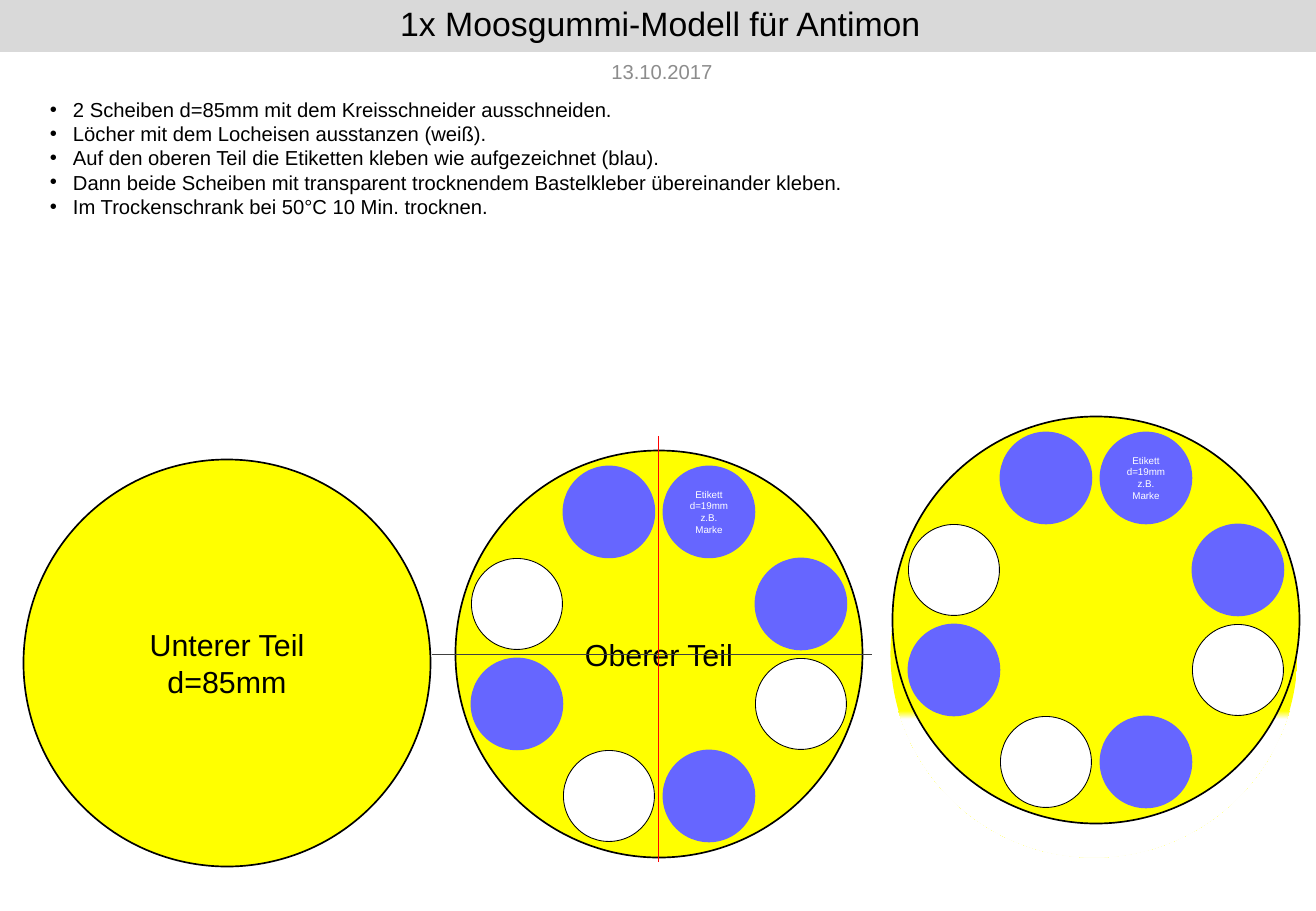
"""Builds the slide with the foam rubber model of antimony: two discs and the glued result."""
from dataclasses import dataclass

from lxml import etree
from pptx import Presentation
from pptx.dml.color import RGBColor
from pptx.enum.shapes import MSO_CONNECTOR, MSO_SHAPE
from pptx.enum.text import MSO_ANCHOR, MSO_AUTO_SIZE, PP_ALIGN
from pptx.oxml.ns import qn
from pptx.util import Pt

ELLIPSE = MSO_SHAPE.OVAL
STRAIGHT = MSO_CONNECTOR.STRAIGHT
MIDDLE, TOP = MSO_ANCHOR.MIDDLE, MSO_ANCHOR.TOP
CENTER, LEFT = PP_ALIGN.CENTER, PP_ALIGN.LEFT
NO_AUTOFIT = MSO_AUTO_SIZE.NONE
EMU_PER_PX = 7526
TITLE_ONLY = 5


@dataclass(frozen=True)
class Theme:
    font: str = "Arial"
    black: str = "000000"
    white: str = "FFFFFF"
    grey: str = "8C8C8C"
    band: str = "D9D9D9"
    foam: str = "FFFF00"
    label: str = "6666FF"
    red: str = "FF0000"
    dark: str = "404040"
    title_size: float = 20
    disc_size: float = 18
    body_size: float = 12
    label_size: float = 5.8


THEME = Theme()

SLIDE_SIZE = (1316, 911)
TITLE = ("1x Moosgummi-Modell für Antimon", (0, 0, 1321, 52))
DATE = ("13.10.2017", (583, 52, 158, 38))
STEPS = [
    "2 Scheiben d=85mm mit dem Kreisschneider ausschneiden.",
    "Löcher mit dem Locheisen ausstanzen (weiß).",
    "Auf den oberen Teil die Etiketten kleben wie aufgezeichnet (blau).",
    "Dann beide Scheiben mit transparent trocknendem Bastelkleber übereinander kleben.",
    "Im Trockenschrank bei 50°C 10 Min. trocknen.",
]
STEPS_BOX = (38, 91, 1244, 96)
STEP_INDENT = 23

DISC, SPOT = 407, 91
LABEL_INSET = 11
NEAR, FAR = 50, 142
LOWER_DISC = ("Unterer Teil\nd=85mm", (227, 663))
UPPER_DISC = ("Oberer Teil", (659, 654))
GLUED_DISC = ("", (1096, 620))
GLUED_BACK = (1094, 654)
BACK_FADE = (0.64, 0.66)
LABEL_TEXT = "Etikett d=19mm\nz.B. Marke"
SPOTS = [
    (NEAR, -FAR, "label", LABEL_TEXT),
    (-NEAR, FAR, "hole", ""),
    (NEAR, FAR, "label", ""),
    (-FAR, NEAR, "label", ""),
    (FAR, NEAR, "hole", ""),
    (-FAR, -NEAR, "hole", ""),
    (FAR, -NEAR, "label", ""),
    (-NEAR, -FAR, "label", ""),
]
SPOT_STYLES = {
    "label": (THEME.label, THEME.label, 1),
    "hole": (THEME.white, THEME.black, 0.5),
}
AXES = [
    ((658, 436), (658, 862), THEME.red),
    ((432, 654), (872, 654), THEME.dark),
]


def px(length):
    return length * EMU_PER_PX


def rgb(color):
    return RGBColor.from_string(color)


def write(frame, text, size, color, align=CENTER, anchor=MIDDLE):
    frame.text = text
    frame.word_wrap = True
    frame.auto_size = NO_AUTOFIT
    frame.vertical_anchor = anchor
    for paragraph in frame.paragraphs:
        paragraph.alignment = align
        for run in paragraph.runs:
            run.font.name = THEME.font
            run.font.size = Pt(size)
            run.font.color.rgb = rgb(color)


def add_circle(shapes, center, diameter, fill, line, width):
    left, top = (px(middle) - px(diameter) // 2 for middle in center)
    circle = shapes.add_shape(ELLIPSE, left, top, px(diameter), px(diameter))
    circle.shadow.inherit = False
    circle.fill.solid()
    circle.fill.fore_color.rgb = rgb(fill)
    circle.line.color.rgb = rgb(line)
    circle.line.width = Pt(width)
    return circle


def add_disc(shapes, text, center):
    disc = add_circle(shapes, center, DISC, THEME.foam, THEME.black, 1)
    if text:
        write(disc.text_frame, text, THEME.disc_size, THEME.black)


def add_spots(shapes, center):
    for dx, dy, kind, text in SPOTS:
        spot = add_circle(shapes, (center[0] + dx, center[1] + dy), SPOT, *SPOT_STYLES[kind])
        if text:
            frame = spot.text_frame
            write(frame, text, THEME.label_size, THEME.white)
            frame.margin_left = frame.margin_right = px(LABEL_INSET)


def add_glued_back(shapes):
    back = add_circle(shapes, GLUED_BACK, DISC, THEME.foam, THEME.foam, 1)
    back.line.fill.background()
    back.fill.gradient()
    back.fill.gradient_angle = 270
    fade = zip(back.fill.gradient_stops, BACK_FADE, (THEME.foam, THEME.white))
    for stop, position, color in fade:
        stop.position = position
        stop.color.rgb = rgb(color)


def add_axis(shapes, start, end, color):
    axis = shapes.add_connector(STRAIGHT, *map(px, start + end))
    axis.line.color.rgb = rgb(color)
    axis.line.width = Pt(0.5)
    etree.SubElement(axis._element.spPr, qn("a:effectLst"))


def add_steps(shapes):
    frame = shapes.add_textbox(*map(px, STEPS_BOX)).text_frame
    write(frame, "\n".join(STEPS), THEME.body_size, THEME.black, LEFT, TOP)
    for step in frame.paragraphs:
        properties = step._p.get_or_add_pPr()
        properties.set("marL", str(px(STEP_INDENT)))
        properties.set("indent", str(-px(STEP_INDENT)))
        etree.SubElement(properties, qn("a:buFont")).set("typeface", THEME.font)
        etree.SubElement(properties, qn("a:buChar")).set("char", "•")


def add_title(title):
    text, box = TITLE
    title.left, title.top, title.width, title.height = map(px, box)
    title.fill.solid()
    title.fill.fore_color.rgb = rgb(THEME.band)
    write(title.text_frame, text, THEME.title_size, THEME.black)
    title.text_frame.paragraphs[0].line_spacing = 0.9


def main():
    presentation = Presentation()
    presentation.slide_width, presentation.slide_height = map(px, SLIDE_SIZE)
    shapes = presentation.slides.add_slide(presentation.slide_layouts[TITLE_ONLY]).shapes

    add_title(shapes.title)
    date_text, date_box = DATE
    date = shapes.add_textbox(*map(px, date_box))
    write(date.text_frame, date_text, THEME.body_size, THEME.grey)
    add_steps(shapes)

    add_disc(shapes, *LOWER_DISC)
    upper = shapes.add_group_shape().shapes
    glued = shapes.add_group_shape().shapes
    add_glued_back(glued)
    for group, (text, center) in ((upper, UPPER_DISC), (glued, GLUED_DISC)):
        add_disc(group, text, center)
        add_spots(group, center)
    for axis in AXES:
        add_axis(shapes, *axis)

    presentation.save("out.pptx")


if __name__ == "__main__":
    main()
